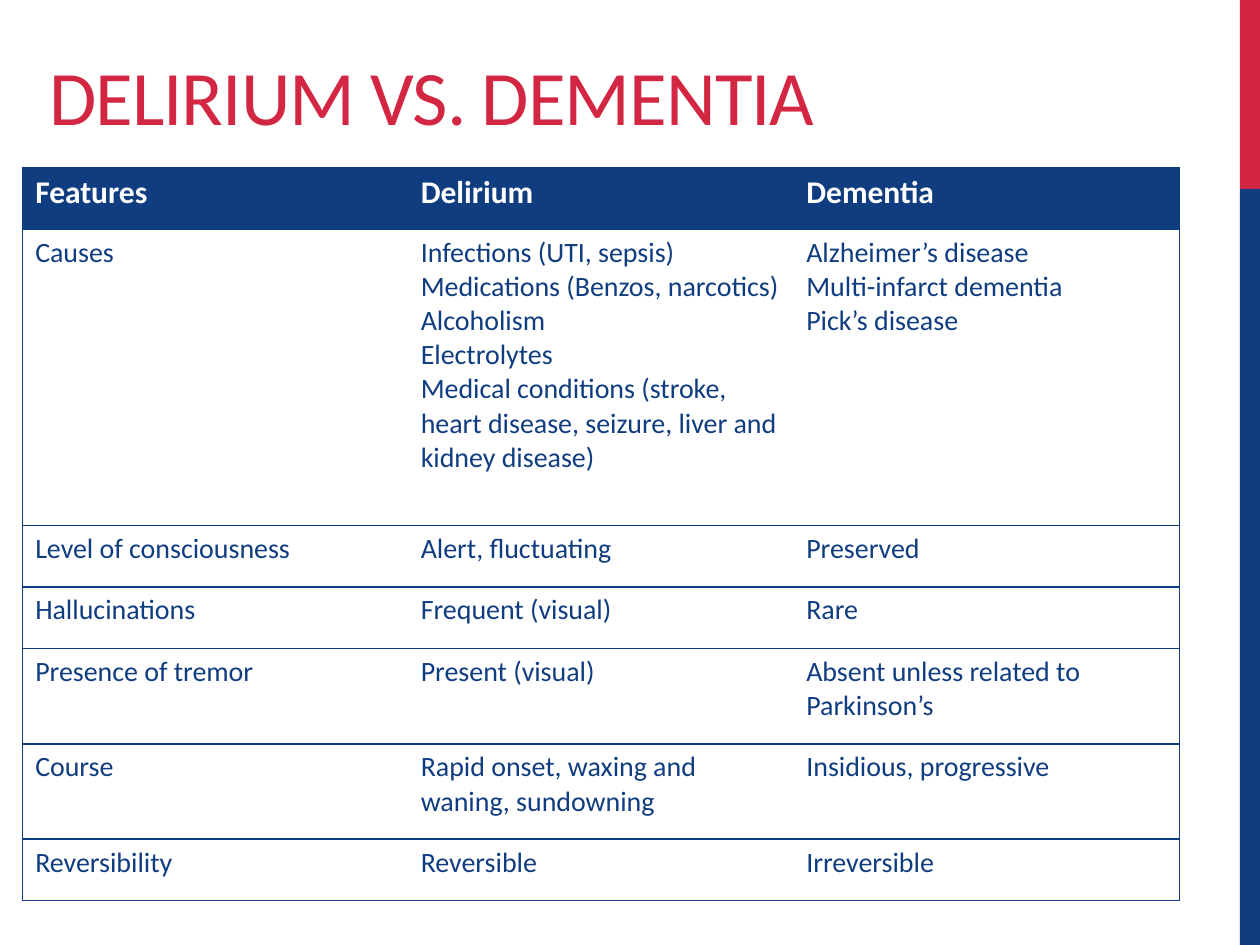
from lxml.etree import SubElement as Sub
from pptx import Presentation
from pptx.dml.color import RGBColor as Rgb
from pptx.enum.shapes import MSO_SHAPE as Shape
from pptx.enum.text import MSO_ANCHOR as Anchor, PP_ALIGN as Align
from pptx.oxml.ns import qn
from pptx.util import Inches as In, Pt

WIDE, HIGH = 10, 7.5
FONT = "Calibri"
HUES = {"red": "D22643", "blue": "103D80", "rule": "0D3B80", "white": "FFFFFF"}
HEAD = ["Features", "Delirium", "Dementia"]
BODY = [
    ["Causes",
     "Infections (UTI, sepsis)\nMedications (Benzos, narcotics)\nAlcoholism\n"
     "Electrolytes\nMedical conditions (stroke, heart disease, seizure, "
     "liver and kidney disease)",
     "Alzheimer’s disease\nMulti-infarct dementia\nPick’s disease"],
    ["Level of consciousness", "Alert, fluctuating", "Preserved"],
    ["Hallucinations", "Frequent (visual)", "Rare"],
    ["Presence of tremor", "Present (visual)",
     "Absent unless related to Parkinson’s"],
    ["Course", "Rapid onset, waxing and waning, sundowning",
     "Insidious, progressive"],
    ["Reversibility", "Reversible", "Irreversible"],
]
ROWS = [0.49, 2.36, 0.49, 0.49, 0.76, 0.76, 0.49]


def hue(name):
    return Rgb.from_string(HUES[name])


def style(par, size, color, bold=False):
    font = par.font
    font.name, font.size, font.bold = FONT, Pt(size), bold
    font.color.rgb = hue(color)


def add_bands(slide, x, y, w, h):
    """Side stripe: a red fifth above four blue fifths."""
    cut = h / 5
    for top, tall, color in ((y, cut, "red"), (y + cut, h - cut, "blue")):
        band = slide.shapes.add_shape(
            Shape.RECTANGLE, In(x), In(top), In(w), In(tall))
        band.shadow.inherit = False
        band.fill.solid()
        band.fill.fore_color.rgb = hue(color)
        band.line.fill.background()


def set_title(slide, text, x, y, w, h):
    title = slide.shapes.title
    title.left, title.top, title.width, title.height = map(In, (x, y, w, h))
    frame = title.text_frame
    frame.text = text
    frame.word_wrap = True
    frame.vertical_anchor = Anchor.BOTTOM
    par = frame.paragraphs[0]
    par.alignment = Align.LEFT
    style(par, 44, "red")
    par.runs[0].font._element.set("spc", "-60")


def rule_cell(cell, first, last):
    """Rule above and below each cell, and at the table's outer sides."""
    props = cell._tc.get_or_add_tcPr()
    for side, shown in (("L", first), ("R", last), ("T", True), ("B", True)):
        line = Sub(props, qn(f"a:ln{side}"), w=str(Pt(1)))
        if shown:
            fill = Sub(line, qn("a:solidFill"))
            Sub(fill, qn("a:srgbClr"), val=HUES["rule"])
        else:
            Sub(line, qn("a:noFill"))


def add_grid(slide, x, y, w, h):
    cols = len(HEAD)
    table = slide.shapes.add_table(
        len(ROWS), cols, In(x), In(y), In(w), In(h)).table
    for col in table.columns:
        col.width = In(w / cols)
    for row, tall in zip(table.rows, ROWS):
        row.height = In(tall * h / sum(ROWS))
    for r, texts in enumerate([HEAD] + BODY):
        for c, text in enumerate(texts):
            cell = table.cell(r, c)
            cell.text = text
            rule_cell(cell, c == 0, c == cols - 1)
            if r == 0:
                cell.fill.solid()
                cell.fill.fore_color.rgb = hue("blue")
            else:
                cell.fill.background()
            for par in cell.text_frame.paragraphs:
                if r == 0:
                    style(par, 18, "white", True)
                else:
                    style(par, 16, "blue")


def main():
    deck = Presentation()
    deck.slide_width, deck.slide_height = In(WIDE), In(HIGH)
    slide = deck.slides.add_slide(deck.slide_layouts[5])
    edge = 0.16
    add_bands(slide, WIDE - edge, 0, edge, HIGH)
    set_title(slide, "DELIRIUM VS. DEMENTIA", 0.29, -0.33, 6.56, HIGH / 5)
    add_grid(slide, 0.18, 1.33, 9.18, 5.82)
    deck.save("out.pptx")


if __name__ == "__main__":
    main()
